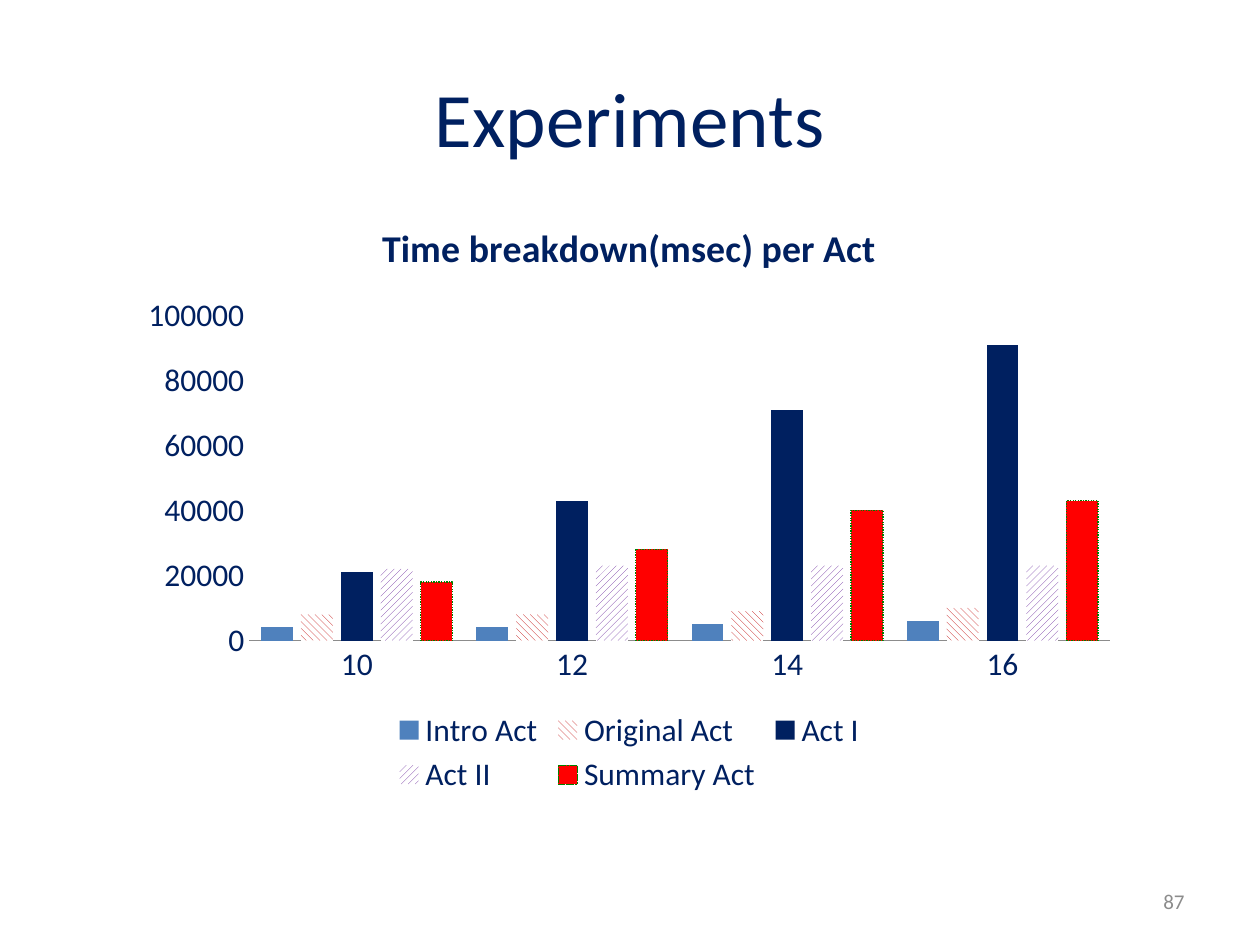
"""Build the Experiments slide with its clustered column chart."""
from pptx import Presentation
from pptx.chart.data import CategoryChartData
from pptx.dml.color import RGBColor
from pptx.enum.chart import XL_CHART_TYPE, XL_LEGEND_POSITION, XL_TICK_MARK
from pptx.enum.dml import MSO_LINE, MSO_PATTERN
from pptx.enum.text import MSO_ANCHOR, PP_ALIGN
from pptx.util import Pt

COLUMN = XL_CHART_TYPE.COLUMN_CLUSTERED
BOTTOM = XL_LEGEND_POSITION.BOTTOM
NO_TICK = XL_TICK_MARK.NONE
DOTS = MSO_LINE.ROUND_DOT
DOWN = MSO_PATTERN.WIDE_DOWNWARD_DIAGONAL
UP = MSO_PATTERN.WIDE_UPWARD_DIAGONAL
MIDDLE = MSO_ANCHOR.MIDDLE
CENTER, RIGHT = PP_ALIGN.CENTER, PP_ALIGN.RIGHT

NAVY = RGBColor(0x00, 0x20, 0x60)
BLUE = RGBColor(0x4F, 0x81, 0xBD)
CRIMSON = RGBColor(0xC0, 0x00, 0x00)
PURPLE = RGBColor(0x70, 0x30, 0xA0)
RED = RGBColor(0xFF, 0x00, 0x00)
GREEN = RGBColor(0x00, 0x80, 0x00)
GRAY = RGBColor(0x8C, 0x8C, 0x8C)
WHITE = RGBColor(0xFF, 0xFF, 0xFF)

SIZES = ["10", "12", "14", "16"]
ACTS = [
    ("Intro Act", [4000, 4000, 5000, 6000], BLUE, None, None),
    ("Original Act", [8000, 8000, 9000, 10000], CRIMSON, DOWN, None),
    ("Act I", [21000, 43000, 71000, 91000], NAVY, None, None),
    ("Act II", [22000, 23000, 23000, 23000], PURPLE, UP, None),
    ("Summary Act", [18000, 28000, 40000, 43000], RED, None, GREEN),
]


def style(font, size, color, bold=False):
    font.name, font.size, font.bold = "Calibri", Pt(size), bold
    font.color.rgb = color


def write(frame, text, size=18, color=NAVY, bold=False, align=CENTER):
    para = frame.paragraphs[0]
    para.alignment = align
    run = para.add_run()
    run.text = text
    style(run.font, size, color, bold)


class Deck:
    def __init__(self, wide, high):
        self.show = Presentation()
        self.show.slide_width, self.show.slide_height = Pt(wide), Pt(high)
        self.slide = self.show.slides.add_slide(self.show.slide_layouts[5])

    def title(self, text, left, top, wide, high):
        shape = self.slide.shapes.title
        shape.left, shape.top = Pt(left), Pt(top)
        shape.width, shape.height = Pt(wide), Pt(high)
        shape.text_frame.vertical_anchor = MIDDLE
        write(shape.text_frame, text, size=44)

    def label(self, text, left, top, wide, high, **form):
        box = self.slide.shapes.add_textbox(Pt(left), Pt(top), Pt(wide), Pt(high))
        box.text_frame.word_wrap = True
        box.text_frame.vertical_anchor = MIDDLE
        write(box.text_frame, text, **form)

    def chart(self, text, left, top, wide, high):
        data = CategoryChartData(number_format="0")
        data.categories = SIZES
        for name, values, *_ in ACTS:
            data.add_series(name, values)
        chart = self.slide.shapes.add_chart(
            COLUMN, Pt(left), Pt(top), Pt(wide), Pt(high), data).chart
        style(chart.font, 18, NAVY)
        chart.has_title = True
        write(chart.chart_title.text_frame, text, size=21.6, bold=True)
        chart.chart_title.include_in_layout = False
        chart.has_legend = True
        chart.legend.position = BOTTOM
        chart.legend.include_in_layout = False
        for axis in (chart.category_axis, chart.value_axis):
            axis.major_tick_mark = axis.minor_tick_mark = NO_TICK
            axis.has_major_gridlines = False
        chart.category_axis.format.line.color.rgb = GRAY
        chart.value_axis.format.line.fill.background()
        chart.value_axis.maximum_scale = 100000
        chart.value_axis.minimum_scale = 0
        chart.value_axis.major_unit = 20000
        plot = chart.plots[0]
        plot.gap_width, plot.overlap, plot.vary_by_categories = 75, -25, False
        for bars, (_, _, color, hatch, edge) in zip(plot.series, ACTS):
            self.paint(bars, color, hatch, edge)

    def paint(self, bars, color, hatch, edge):
        bars.invert_if_negative = False
        fill, line = bars.format.fill, bars.format.line
        if hatch:
            fill.patterned()
            fill.pattern = hatch
            fill.fore_color.rgb, fill.back_color.rgb = color, WHITE
        else:
            fill.solid()
            fill.fore_color.rgb = color
        if edge:
            line.color.rgb, line.width = edge, Pt(0.75)
            line.dash_style = DOTS
        else:
            line.fill.background()


def main():
    deck = Deck(720, 540)
    deck.title("Experiments", 36, 21.6, 648, 90)
    deck.chart("Time breakdown(msec) per Act", 73.4, 111.6, 572.4, 345.6)
    deck.label("87", 516, 500.5, 168, 28.75, size=12, color=GRAY, align=RIGHT)
    deck.show.save("out.pptx")


if __name__ == "__main__":
    main()
